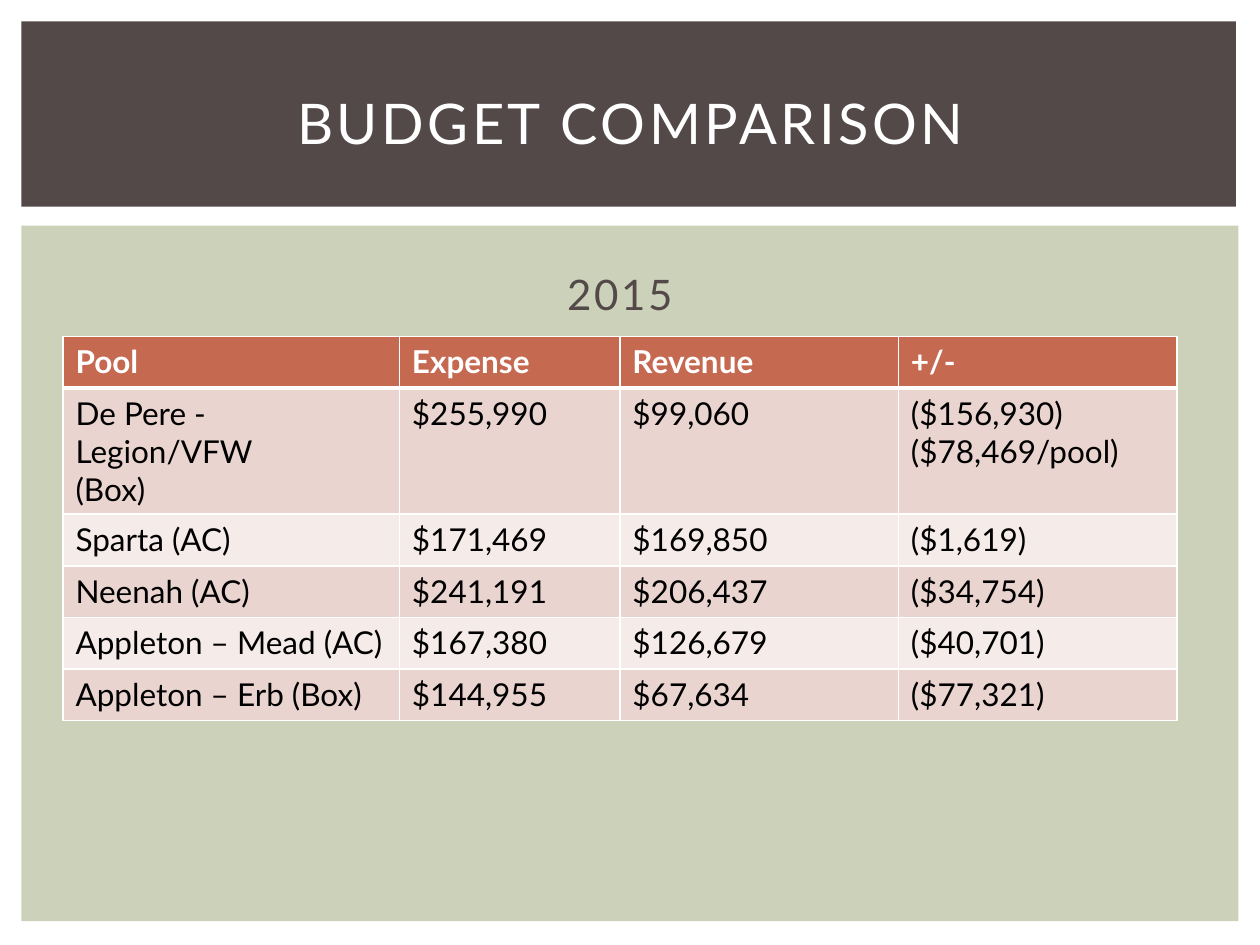
from dataclasses import dataclass

import lxml.etree
import pptx
import pptx.dml.color
import pptx.enum.shapes
import pptx.enum.text
import pptx.oxml.ns
import pptx.util

Inches = pptx.util.Inches
ALIGN = pptx.enum.text.PP_ALIGN
ANCHOR = pptx.enum.text.MSO_ANCHOR


@dataclass(frozen=True)
class Theme:
    font: str = "Lato"
    white: str = "FFFFFF"
    black: str = "000000"
    dark: str = "534949"
    sage: str = "CCD1B9"
    header: str = "C66951"
    bands: tuple = ("EAD4D0", "F5EBE9")
    title_size: int = 32
    subtitle_size: int = 24
    table_size: int = 18


THEME = Theme()

COLUMN_WIDTHS = (2.67, 1.75, 2.21, 2.21)
ROW_HEIGHT = 0.41
BUDGET = (
    ("Pool", "Expense", "Revenue", "+/-"),
    ("De Pere - Legion/VFW\n(Box)", "$255,990", "$99,060", "($156,930)\n($78,469/pool)"),
    ("Sparta (AC)", "$171,469", "$169,850", "($1,619)"),
    ("Neenah (AC)", "$241,191", "$206,437", "($34,754)"),
    ("Appleton – Mead (AC)", "$167,380", "$126,679", "($40,701)"),
    ("Appleton – Erb (Box)", "$144,955", "$67,634", "($77,321)"),
)


def rgb(value):
    return pptx.dml.color.RGBColor.from_string(value)


def format_text(frame, size, color, bold=False, spacing=0):
    for para in frame.paragraphs:
        for span in para.runs:
            span.font.name = THEME.font
            span.font.size = pptx.util.Pt(size)
            span.font.bold = bold
            span.font.color.rgb = rgb(color)
            if spacing:
                span.font._element.set("spc", str(int(spacing * 100)))


def add_panel(page, box, color):
    panel = page.shapes.add_shape(
        pptx.enum.shapes.MSO_SHAPE.RECTANGLE, *map(Inches, box))
    panel.shadow.inherit = False
    panel.fill.solid()
    panel.fill.fore_color.rgb = rgb(color)
    panel.line.fill.background()


def add_heading(page, box, text, size, color, spacing, anchor):
    frame = page.shapes.add_textbox(*map(Inches, box)).text_frame
    frame.word_wrap = True
    frame.vertical_anchor = anchor
    frame.text = text
    frame.paragraphs[0].alignment = ALIGN.CENTER
    format_text(frame, size, color, spacing=spacing)


def set_borders(cell, widths):
    """Draw white borders; widths maps a side's tag to its points."""
    properties = cell._tc.get_or_add_tcPr()
    # Borders must come before the fill in the cell properties
    for index, (side, points) in enumerate(widths.items()):
        line = lxml.etree.Element(
            pptx.oxml.ns.qn(f"a:{side}"), w=str(pptx.util.Pt(points)))
        fill = lxml.etree.SubElement(line, pptx.oxml.ns.qn("a:solidFill"))
        lxml.etree.SubElement(fill, pptx.oxml.ns.qn("a:srgbClr"), val=THEME.white)
        properties.insert(index, line)


def add_budget_table(page, left, top):
    table = page.shapes.add_table(
        len(BUDGET), len(COLUMN_WIDTHS), Inches(left), Inches(top),
        Inches(sum(COLUMN_WIDTHS)), Inches(ROW_HEIGHT * len(BUDGET))).table
    for column, width in zip(table.columns, COLUMN_WIDTHS):
        column.width = Inches(width)
    for row_index, values in enumerate(BUDGET):
        table.rows[row_index].height = Inches(ROW_HEIGHT)
        is_header = row_index == 0
        fill = THEME.header if is_header else THEME.bands[(row_index - 1) % 2]
        color = THEME.white if is_header else THEME.black
        for column_index, value in enumerate(values):
            cell = table.cell(row_index, column_index)
            cell.text_frame.text = value
            format_text(cell.text_frame, THEME.table_size, color, bold=is_header)
            cell.fill.solid()
            cell.fill.fore_color.rgb = rgb(fill)
            set_borders(cell, {"lnL": 1, "lnR": 1,
                               "lnT": 3 if row_index == 1 else 1,
                               "lnB": 3 if is_header else 1})


def add_title_band(page, box):
    left, top, width, height = box
    add_panel(page, box, THEME.dark)
    add_heading(page, (left + 0.25, top + 0.22, width - 0.47, height - 0.32),
                "BUDGET COMPARISON", THEME.title_size, THEME.white, 2, ANCHOR.MIDDLE)


def add_budget_section(page, box):
    left, top, width, height = box
    add_panel(page, box, THEME.sage)
    add_heading(page, (left + 0.33, top + 0.09, sum(COLUMN_WIDTHS), 0.7),
                "2015", THEME.subtitle_size, THEME.dark, 1.5, ANCHOR.BOTTOM)
    add_budget_table(page, left + 0.33, top + 0.88)


def main():
    deck = pptx.Presentation()
    deck.slide_width = Inches(10)
    deck.slide_height = Inches(7.5)
    page = deck.slides.add_slide(deck.slide_layouts[6])
    add_budget_section(page, (0.17, 1.79, 9.66, 5.52))
    add_title_band(page, (0.17, 0.17, 9.64, 1.47))
    deck.save("out.pptx")


if __name__ == "__main__":
    main()
